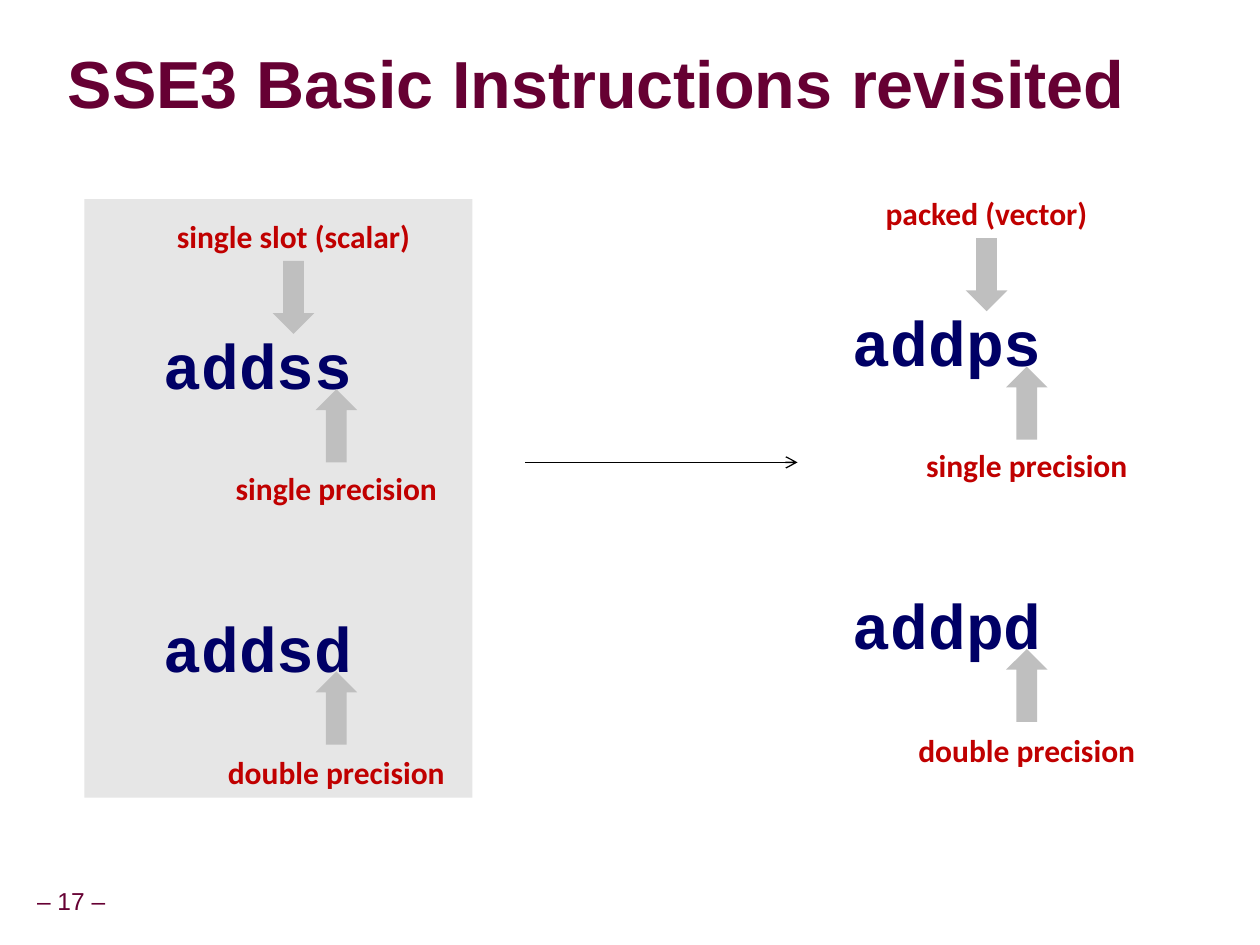
from collections import namedtuple
from lxml.etree import SubElement
from pptx import Presentation
from pptx.dml.color import RGBColor
from pptx.enum.shapes import MSO_CONNECTOR, MSO_SHAPE
from pptx.enum.text import MSO_ANCHOR, PP_ALIGN
from pptx.oxml.ns import qn
from pptx.util import Inches, Pt

Style = namedtuple("Style", "name size bold color")
Theme = namedtuple("Theme", "title code label page panel arrow line")
theme = Theme(
    title=Style("Arial", 38, True, "660033"),
    code=Style("Courier New", 36, True, "000066"),
    label=Style("Calibri", 18, True, "C00000"),
    page=Style("Arial", 14, False, "660033"),
    panel="E6E6E6", arrow="BFBFBF", line="000000",
)

deck = Presentation()
deck.slide_width, deck.slide_height = Inches(10), Inches(7.5)
slide = deck.slides.add_slide(deck.slide_layouts[6])


def add_text(text, box, style, align=PP_ALIGN.LEFT, space=1.0, **frame):
    """Add one line of text; frame holds text frame settings."""
    shape = slide.shapes.add_textbox(*map(Inches, box))
    for key, value in ({"word_wrap": True} | frame).items():
        setattr(shape.text_frame, key, value)
    para = shape.text_frame.paragraphs[0]
    para.alignment, para.line_spacing = align, space
    run = para.add_run()
    run.text = text
    look = {"name": style.name, "size": Pt(style.size), "bold": style.bold}
    for key, value in look.items():
        setattr(run.font, key, value)
    run.font.color.rgb = RGBColor.from_string(style.color)


def add_block(kind, box, color):
    shape = slide.shapes.add_shape(kind, *map(Inches, box))
    shape.shadow.inherit = False
    shape.fill.solid()
    shape.fill.fore_color.rgb = RGBColor.from_string(color)
    shape.line.fill.background()


add_text("SSE3 Basic Instructions revisited", (0.44, 0.27, 9.53, 0.85),
         theme.title, space=0.87, vertical_anchor=MSO_ANCHOR.MIDDLE)
add_block(MSO_SHAPE.RECTANGLE, (0.67, 1.58, 3.08, 4.75), theme.panel)

# Each column: code left, top; slot label, its width and centre; suffix centre
columns = [
    (1.2, 2.54, "s", "single slot (scalar)", 2.17, 2.33, 2.67),
    (6.67, 2.36, "p", "packed (vector)", 1.83, 7.83, 8.15),
]
rows = [("s", "single precision", 1.83), ("d", "double precision", 2.04)]
arrow_w, arrow_h, label_h, pitch = 0.33, 0.58, 0.7, 2.25

for left, top, slot, title, width, mid, end in columns:
    add_text(title, (mid - width / 2, top - 0.87, width, label_h),
             theme.label, PP_ALIGN.CENTER)
    add_block(MSO_SHAPE.DOWN_ARROW,
              (mid - arrow_w / 2, top - 0.47, arrow_w, arrow_h), theme.arrow)
    for row, (kind, note, span) in enumerate(rows):
        y = top + row * pitch
        add_text(f"add{slot}{kind}", (left, y, 1.7, 0.7), theme.code,
                 word_wrap=False)
        add_block(MSO_SHAPE.UP_ARROW,
                  (end - arrow_w / 2, y + 0.55 - row * 0.01, arrow_w, arrow_h),
                  theme.arrow)
        add_text(note, (end - span / 2, y + 1.13 + row * 0.01, span, label_h),
                 theme.label, PP_ALIGN.CENTER)

link = slide.shapes.add_connector(
    MSO_CONNECTOR.STRAIGHT, *map(Inches, (4.17, 3.67, 6.33, 3.67)))
link.line.width = Pt(0.75)
link.line.color.rgb = RGBColor.from_string(theme.line)
SubElement(link.line._get_or_add_ln(), qn("a:tailEnd"), type="arrow")
SubElement(link._element.spPr, qn("a:effectLst"))

inset = Inches(0.05)
add_text("– 17 –", (-0.09, 6.99, 1.31, 0.34), theme.page, PP_ALIGN.CENTER,
         space=0.9, word_wrap=False, vertical_anchor=MSO_ANCHOR.MIDDLE,
         margin_left=inset, margin_right=inset)

deck.save("out.pptx")
